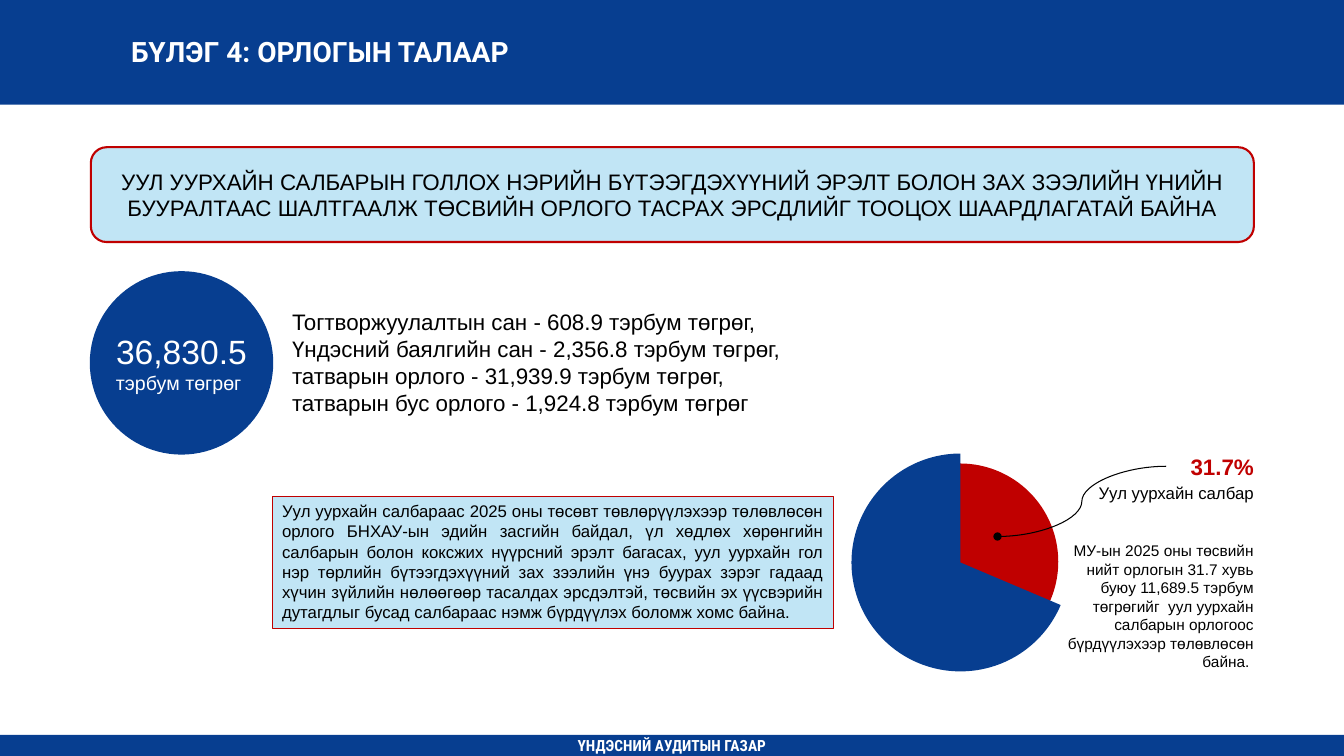
from lxml.etree import SubElement
from pptx import Presentation
from pptx.dml.color import RGBColor
from pptx.enum.shapes import MSO_CONNECTOR, MSO_SHAPE
from pptx.enum.text import MSO_ANCHOR, MSO_AUTO_SIZE, PP_ALIGN
from pptx.oxml.ns import qn
from pptx.util import Cm, Pt

BLUE, RED, PALE = "073E90", "C00000", "C1E5F5"
BLACK, WHITE = "000000", "FFFFFF"
WIDTH, HEIGHT = 33.87, 19.05


def color(value):
    return RGBColor.from_string(value)


def box(x, y, w, h):
    return Cm(x), Cm(y), Cm(w), Cm(h)


def add_text(sp, text, size, font="Arial", fill=BLACK, bold=False,
             align=PP_ALIGN.LEFT, new=False):
    tf = sp.text_frame
    for i, line in enumerate(text.split("\n")):
        p = tf.add_paragraph() if new or i else tf.paragraphs[0]
        p.alignment = align
        r = p.add_run()
        r.text = line
        r.font.name = font
        r.font.size = Pt(size)
        r.font.bold = bold
        r.font.color.rgb = color(fill)


def set_frame(sp, anchor=MSO_ANCHOR.MIDDLE, wrap=True, inset=None):
    tf = sp.text_frame
    tf.word_wrap = wrap
    tf.auto_size = MSO_AUTO_SIZE.NONE
    tf.vertical_anchor = anchor
    if inset is not None:
        tf.margin_left = tf.margin_right = Cm(inset)
        tf.margin_top = tf.margin_bottom = Cm(inset)


def add_shape(s, kind, at, fill, line=None, width=1.5):
    sp = s.shapes.add_shape(kind, *box(*at))
    sp.shadow.inherit = False
    sp.fill.solid()
    sp.fill.fore_color.rgb = color(fill)
    if line:
        sp.line.color.rgb = color(line)
        sp.line.width = Pt(width)
    else:
        sp.line.fill.background()
    return sp


def add_label(s, at, text, size, anchor=MSO_ANCHOR.MIDDLE, inset=None, **fmt):
    sp = s.shapes.add_textbox(*box(*at))
    set_frame(sp, anchor, inset=inset)
    add_text(sp, text, size, **fmt)


def add_curve(s, start, end):
    cx = s.shapes.add_connector(MSO_CONNECTOR.CURVE, *map(Cm, start + end))
    cx.line.color.rgb = color(BLACK)
    cx.line.width = Pt(0.75)
    SubElement(cx.line._get_or_add_ln(), qn("a:tailEnd"), type="oval")
    SubElement(cx._element.spPr, qn("a:effectLst"))


def add_header(s, text):
    bar = add_shape(s, MSO_SHAPE.RECTANGLE, (0, 0, WIDTH, 2.64), BLUE)
    s.shapes._spTree.insert(2, bar._element)
    title = s.shapes.title
    title.left, title.top, title.width, title.height = box(3.05, 0.74, 23.32, 1.12)
    set_frame(title)
    add_text(title, text, 20, font="Roboto", fill=WHITE, bold=True)


def add_footer(s, text):
    bar = add_shape(s, MSO_SHAPE.RECTANGLE, (0, 18.52, WIDTH, HEIGHT - 18.52), BLUE)
    set_frame(bar, inset=0)
    add_text(bar, text, 11, font="Roboto Condensed", fill=WHITE, bold=True,
             align=PP_ALIGN.CENTER)


def add_revenue(s):
    circle = add_shape(s, MSO_SHAPE.OVAL, (2.29, 6.86, 4.57, 4.57), BLUE, BLUE)
    set_frame(circle, wrap=False, inset=0)
    add_text(circle, "36,830.5", 24, fill=WHITE, align=PP_ALIGN.CENTER)
    add_text(circle, "тэрбум төгрөг ", 14, fill=WHITE, align=PP_ALIGN.CENTER, new=True)
    add_label(s, (7.11, 7.65, 13.28, 3),
              "Тогтворжуулалтын сан - 608.9 тэрбум төгрөг,\n"
              "Үндэсний баялгийн сан - 2,356.8 тэрбум төгрөг,\n"
              "татварын орлого - 31,939.9 тэрбум төгрөг,\n"
              "татварын бус орлого - 1,924.8 тэрбум төгрөг",
              16, anchor=MSO_ANCHOR.TOP)


def add_mining_share(s):
    right = {"align": PP_ALIGN.RIGHT, "inset": 0.25}
    add_shape(s, MSO_SHAPE.OVAL, (21.72, 11.68, 4.95, 4.95), RED)
    pie = add_shape(s, MSO_SHAPE.PIE, (21.46, 11.43, 5.49, 5.49), BLUE)
    pie.adjustments[0], pie.adjustments[1] = 13.8, 162
    add_curve(s, (29.39, 11.75), (25.14, 13.52))
    add_label(s, (29.39, 11.43, 2.46, 0.66), "31.7%", 16, fill=RED, bold=True, **right)
    add_label(s, (27.4, 12.09, 4.45, 0.66), "Уул уурхайн салбар", 12, **right)
    add_label(s, (26.37, 13.39, 5.48, 3.33),
              "МУ-ын 2025 оны төсвийн нийт орлогын 31.7 хувь буюу 11,689.5 тэрбум "
              "төгрөгийг  уул уурхайн салбарын орлогоос бүрдүүлэхээр төлөвлөсөн байна. ",
              11, anchor=MSO_ANCHOR.TOP, **right)


def main():
    prs = Presentation()
    prs.slide_width, prs.slide_height = Cm(WIDTH), Cm(HEIGHT)
    s = prs.slides.add_slide(prs.slide_layouts[5])
    add_header(s, "БҮЛЭГ 4: ОРЛОГЫН ТАЛААР")
    add_footer(s, "ҮНДЭСНИЙ АУДИТЫН ГАЗАР")

    message = add_shape(s, MSO_SHAPE.ROUNDED_RECTANGLE, (2.29, 3.71, 29.31, 2.39), PALE, RED)
    set_frame(message)
    add_text(message,
             "УУЛ УУРХАЙН САЛБАРЫН ГОЛЛОХ НЭРИЙН БҮТЭЭГДЭХҮҮНИЙ ЭРЭЛТ БОЛОН ЗАХ "
             "ЗЭЭЛИЙН ҮНИЙН БУУРАЛТААС ШАЛТГААЛЖ ТӨСВИЙН ОРЛОГО ТАСРАХ ЭРСДЛИЙГ "
             "ТООЦОХ ШААРДЛАГАТАЙ БАЙНА", 16, align=PP_ALIGN.CENTER)

    add_revenue(s)
    add_mining_share(s)

    risk = add_shape(s, MSO_SHAPE.RECTANGLE, (6.86, 12.5, 14.15, 3.33), PALE, RED, 0.75)
    set_frame(risk, MSO_ANCHOR.TOP)
    add_text(risk,
             "Уул уурхайн салбараас 2025 оны төсөвт төвлөрүүлэхээр төлөвлөсөн орлого "
             "БНХАУ-ын эдийн засгийн байдал, үл хөдлөх хөрөнгийн салбарын болон коксжих "
             "нүүрсний эрэлт багасах, уул уурхайн гол нэр төрлийн бүтээгдэхүүний зах "
             "зээлийн үнэ буурах зэрэг гадаад хүчин зүйлийн нөлөөгөөр тасалдах "
             "эрсдэлтэй, төсвийн эх үүсвэрийн дутагдлыг бусад салбараас нэмж "
             "бүрдүүлэх боломж хомс байна.", 12, align=PP_ALIGN.JUSTIFY)
    prs.save("out.pptx")


if __name__ == "__main__":
    main()
